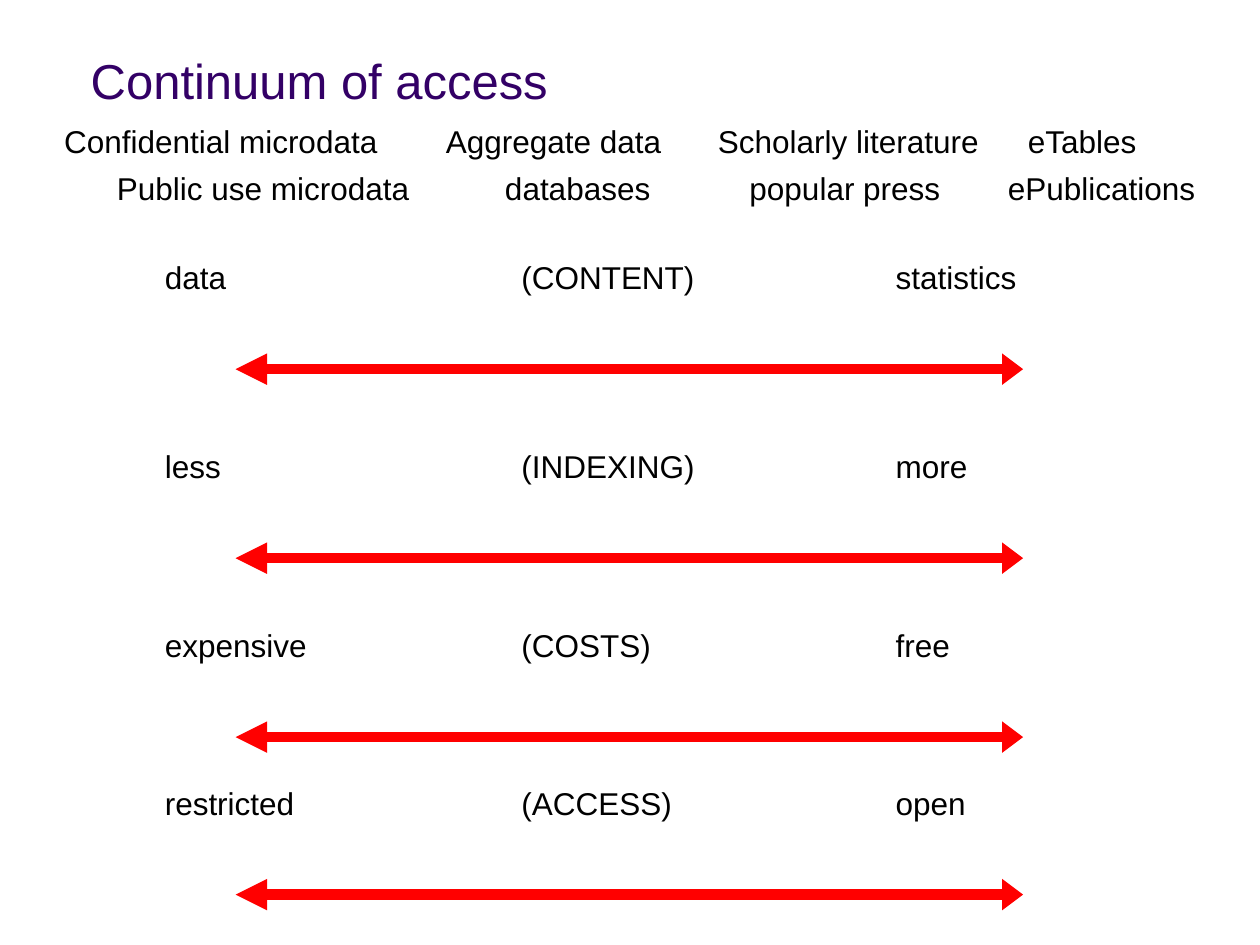
"""Build the slide on the continuum of access."""
from lxml import etree
from pptx import Presentation
from pptx.dml.color import RGBColor
from pptx.enum.shapes import MSO_CONNECTOR
from pptx.enum.text import MSO_ANCHOR, PP_ALIGN
from pptx.oxml.ns import qn
from pptx.util import Inches, Pt

LINE = MSO_CONNECTOR.STRAIGHT
LEFT = PP_ALIGN.LEFT
TOP, BOTTOM = MSO_ANCHOR.TOP, MSO_ANCHOR.BOTTOM
COLORS = {"text": "000000", "title": "330066", "arrow": "FF0000"}
SOURCES = [
    (0.92, [("Confidential microdata", 0.41, 2.69), ("Aggregate data", 3.44, 1.91),
            ("Scholarly literature", 5.6, 2.27), ("eTables", 8.06, 1.09)]),
    (1.29, [("Public use microdata", 0.83, 2.52), ("databases", 3.91, 1.36),
            ("popular press", 5.85, 1.77), ("ePublications", 7.9, 1.69)]),
]
COLUMNS = [(1.21, 1.83), (4.04, 2.14), (7.01, 1.78)]
SCALES = [
    (2, ("data", "(CONTENT)", "statistics")),
    (3.5, ("less", "(INDEXING)", "more")),
    (4.92, ("expensive", "(COSTS)", "free")),
    (6.17, ("restricted", "(ACCESS)", "open")),
]


def write(frame, text, size=18, color="text", anchor=TOP, wrap=True, spacing=1.0):
    """Fill a text frame with one formatted paragraph."""
    frame.word_wrap = wrap
    frame.vertical_anchor = anchor
    para = frame.paragraphs[0]
    para.alignment = LEFT
    para.line_spacing = spacing
    run = para.add_run()
    run.text = text
    run.font.name = "Arial"
    run.font.size = Pt(size)
    run.font.color.rgb = RGBColor.from_string(COLORS[color])


class Board:
    """Hold the style and the current slide."""

    def __init__(self, deck):
        self.slide = deck.slides.add_slide(deck.slide_layouts[5])

    def title(self, text, left, top, width, height):
        """Place the title."""
        box = self.slide.shapes.title
        box.left, box.top = Inches(left), Inches(top)
        box.width, box.height = Inches(width), Inches(height)
        write(box.text_frame, text, size=28, color="title", anchor=BOTTOM, spacing=0.9)

    def label(self, text, left, top, width, height, wrap=True):
        """Add a text box."""
        box = self.slide.shapes.add_textbox(
            Inches(left), Inches(top), Inches(width), Inches(height))
        write(box.text_frame, text, wrap=wrap)

    def arrow(self, start, end, level):
        """Add a level line with a head at both ends."""
        line = self.slide.shapes.add_connector(
            LINE, Inches(start), Inches(level), Inches(end), Inches(level))
        line.line.color.rgb = RGBColor.from_string(COLORS["arrow"])
        line.line.width = Pt(6)
        edge = line.line._get_or_add_ln()
        for tag, length in (("a:headEnd", "med"), ("a:tailEnd", "sm")):
            etree.SubElement(edge, qn(tag), type="triangle", w="med", len=length)
        etree.SubElement(line._element.spPr, qn("a:effectLst"))


def main():
    """Build and save the deck."""
    deck = Presentation()
    deck.slide_width, deck.slide_height = Inches(10), Inches(7.5)
    board = Board(deck)
    board.title("Continuum of access", 0.62, 0.25, 8.75, 0.67)
    for top, items in SOURCES:
        for text, left, width in items:
            board.label(text, left, top, width, 0.4, wrap=False)
    for top, words in SCALES:
        for text, (left, width) in zip(words, COLUMNS):
            board.label(text, left, top, width, 0.5)
        board.arrow(1.87, 8.12, top + 0.93)
    deck.save("out.pptx")


if __name__ == "__main__":
    main()
